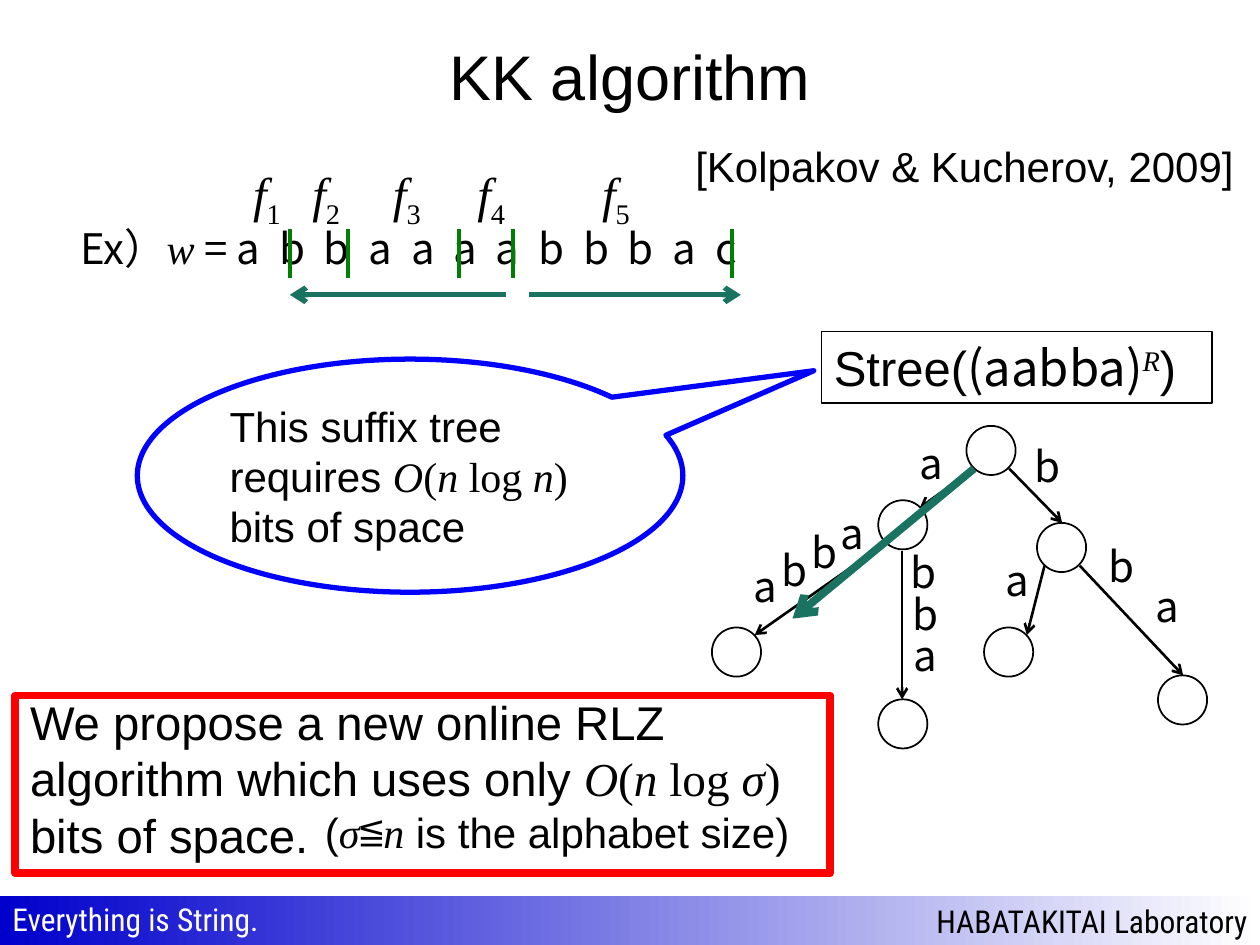
from lxml.etree import SubElement
from pptx import Presentation
from pptx.dml.color import RGBColor
from pptx.enum.shapes import MSO_CONNECTOR, MSO_SHAPE as Preset
from pptx.enum.text import MSO_ANCHOR as Anchor, MSO_AUTO_SIZE as AutoSize, PP_ALIGN as Align
from pptx.oxml.ns import qn
from pptx.util import Inches, Pt

BLACK = RGBColor(0x00, 0x00, 0x00)
WHITE = RGBColor(0xFF, 0xFF, 0xFF)
RED = RGBColor(0xFF, 0x00, 0x00)
BLUE = RGBColor(0x00, 0x00, 0xFF)
NAVY = RGBColor(0x00, 0x00, 0xCC)
GREEN = RGBColor(0x00, 0x80, 0x00)
TEAL = RGBColor(0x1A, 0x73, 0x61)

SANS, SERIF = "Arial", "Times New Roman"
MONO, FOOTER = "Noto Sans CJK JP", "Roboto Condensed"

MATH = dict(font=SERIF)
VAR = dict(font=SERIF, italic=True)
CODE = dict(font=MONO)


def write(paragraph, text, size=24, font=SANS, color=BLACK, italic=False,
          baseline=0, spacing=0):
    """Append one run; baseline is in percent, spacing in points."""
    run = paragraph.add_run()
    run.text = text
    run.font.size = Pt(size)
    run.font.name = font
    run.font.italic = italic
    run.font.color.rgb = color
    props = run.font._element
    if baseline:
        props.set("baseline", str(baseline * 1000))
    if spacing:
        props.set("spc", str(round(spacing * 100)))
    SubElement(props, qn("a:ea")).set("typeface", MONO)


def big_o(variable):
    """Runs for O(n log variable)."""
    return [("O", VAR), ("(", MATH), ("n ", VAR), ("log ", MATH),
            (variable, VAR), (") ", MATH)]


class Board:
    """A slide laid out on a grid of 100 columns by 75 rows."""
    COLS, ROWS = 100, 75

    def __init__(self):
        self.deck = Presentation()
        self.deck.slide_width, self.deck.slide_height = Inches(10), Inches(7.5)
        self.slide = self.deck.slides.add_slide(self.deck.slide_layouts[6])

    def x(self, cols):
        return round(self.deck.slide_width * cols / self.COLS)

    def y(self, rows):
        return round(self.deck.slide_height * rows / self.ROWS)

    def box(self, left, top, width, height):
        return self.x(left), self.y(top), self.x(width), self.y(height)

    def fill_text(self, shape, runs, wrap=False, align=Align.LEFT,
                  anchor=Anchor.TOP, grow=True, **style):
        frame = shape.text_frame
        frame.word_wrap = wrap
        frame.vertical_anchor = anchor
        frame.auto_size = AutoSize.SHAPE_TO_FIT_TEXT if grow else AutoSize.NONE
        paragraph = frame.paragraphs[0]
        paragraph.alignment = align
        for text, own in [(runs, {})] if isinstance(runs, str) else runs:
            write(paragraph, text, **{**style, **own})

    def text(self, area, runs, **style):
        self.fill_text(self.slide.shapes.add_textbox(*self.box(*area)), runs, **style)

    def shape(self, preset, area, line=None, weight=1):
        shape = self.slide.shapes.add_shape(preset, *self.box(*area))
        shape.shadow.inherit = False
        shape.fill.background()
        if line is None:
            shape.line.fill.background()
        else:
            shape.line.color.rgb = line
            shape.line.width = Pt(weight)
        return shape

    def line(self, start, end, color=BLACK, weight=1.5, arrow=True):
        link = self.slide.shapes.add_connector(
            MSO_CONNECTOR.STRAIGHT, self.x(start[0]), self.y(start[1]),
            self.x(end[0]), self.y(end[1]))
        link.line.color.rgb = color
        link.line.width = Pt(weight)
        if arrow:
            SubElement(link.line._get_or_add_ln(), qn("a:tailEnd")).set("type", "arrow")
        SubElement(link._element.spPr, qn("a:effectLst"))


def draw_footer(board):
    band = board.shape(Preset.RECTANGLE, (0, 71.1, 100, 3.9))
    band.fill.gradient()
    band.fill.gradient_angle = 0
    for stop, color in zip(band.fill.gradient_stops, (NAVY, WHITE)):
        stop.color.rgb = color
    board.fill_text(band, "HABATAKITAI Laboratory", wrap=True, align=Align.RIGHT,
                    anchor=Anchor.MIDDLE, grow=False, size=18, font=FOOTER)
    board.text((0, 70.9, 22.2, 4), "Everything is String.", size=18,
               font=FOOTER, color=WHITE)


def draw_factors(board):
    # The string, its factor borders and the factor names
    board.text((5.4, 17.2, 69.4, 5), [
        ("Ex）", CODE), ("w", VAR), (" = ", CODE),
        ("a b b a a a a b b b a c", dict(font=MONO, spacing=2.7))], wrap=True)
    for border in (23, 27.6, 36.4, 40.7, 58.1):
        board.line((border, 18.2), (border, 22.1), GREEN, 2.25, arrow=False)
    for number, left in enumerate((19.1, 23.8, 30.2, 36.9, 46.8), start=1):
        board.text((left, 12.5, 5.1, 5.7),
                   [("f", VAR), (str(number), dict(font=SERIF, baseline=-25))], size=28)
    # Directions read from the current position
    for start, end in ((42, 58.8), (40.2, 23)):
        board.line((start, 23.4), (end, 23.4), TEAL, 3)


def draw_tree(board):
    title = board.shape(Preset.RECTANGLE, (65.2, 26.3, 31, 5.7), BLACK, 0.75)
    board.fill_text(title, [("Stree(", {}), ("(aabba)", CODE),
                            ("R", dict(VAR, baseline=30)), (")", {})], size=28)
    # Nodes
    for left, top in ((76.7, 33.8), (69.7, 39.7), (82.3, 41.5), (56.5, 49.8),
                      (69.7, 55.5), (78.1, 49.8), (91.9, 53.6)):
        board.shape(Preset.OVAL, (left, top, 3.9, 3.9), BLACK)
    # Edges
    for start, end in (((77.3, 37.2), (73, 40.3)), ((80.1, 37.2), (84.3, 41.5)),
                       ((70.3, 43.1), (59.9, 50.4)), ((71.6, 43.7), (71.6, 55.5)),
                       ((82.9, 44.9), (81.5, 50.4)), ((85.7, 44.9), (93.9, 53.6))):
        board.line(start, end)
    # Edge labels
    for letter, left, top in (
            ("a", 72, 34.2), ("b", 81.1, 34.5),
            ("a", 65.7, 39.8), ("b", 63.4, 41.3), ("b", 61, 42.7), ("a", 58.8, 44),
            ("b", 71.3, 42.9), ("b", 71.4, 46.2), ("a", 71.5, 49.5),
            ("a", 78.8, 43.5), ("b", 87, 42.4), ("a", 90.7, 45.6)):
        board.text((left, top, 4.2, 5), letter, font=MONO)
    # Path walked down the tree
    board.line((77.3, 37.2), (62.9, 49.1), TEAL, 4.5)


def draw_remarks(board):
    # Space needed by the suffix tree
    callout = board.shape(Preset.OVAL_CALLOUT, (10.9, 28.5, 43.3, 18.5), BLUE, 3)
    callout.adjustments[0], callout.adjustments[1] = 0.74, -0.45
    board.fill_text(callout, [("This suffix tree requires ", {}), *big_o("n"),
                              ("bits of space", {})], wrap=True, anchor=Anchor.MIDDLE)
    # Proposal
    board.text((1.4, 54.5, 64.3, 15.1), [
        ("We propose a new online RLZ algorithm which uses only ", {}),
        *big_o("σ"), ("bits of space.", {})], wrap=True, size=27)
    board.text((24.8, 63.5, 41.3, 5), [
        ("(", {}), ("σ", VAR), ("≦", MATH), ("n", VAR), (" is the alphabet size)", {})])
    board.shape(Preset.RECTANGLE, (1.2, 55.2, 64.7, 14.1), RED, 4.5)


def main():
    board = Board()
    draw_footer(board)
    board.text((5, 1.3, 90, 9.3), "KK algorithm", wrap=True, align=Align.CENTER,
               anchor=Anchor.MIDDLE, grow=False, size=36)
    board.text((54.2, 10.7, 45.2, 5), "[Kolpakov & Kucherov, 2009]")
    draw_factors(board)
    draw_tree(board)
    draw_remarks(board)
    board.deck.save("out.pptx")


if __name__ == "__main__":
    main()
